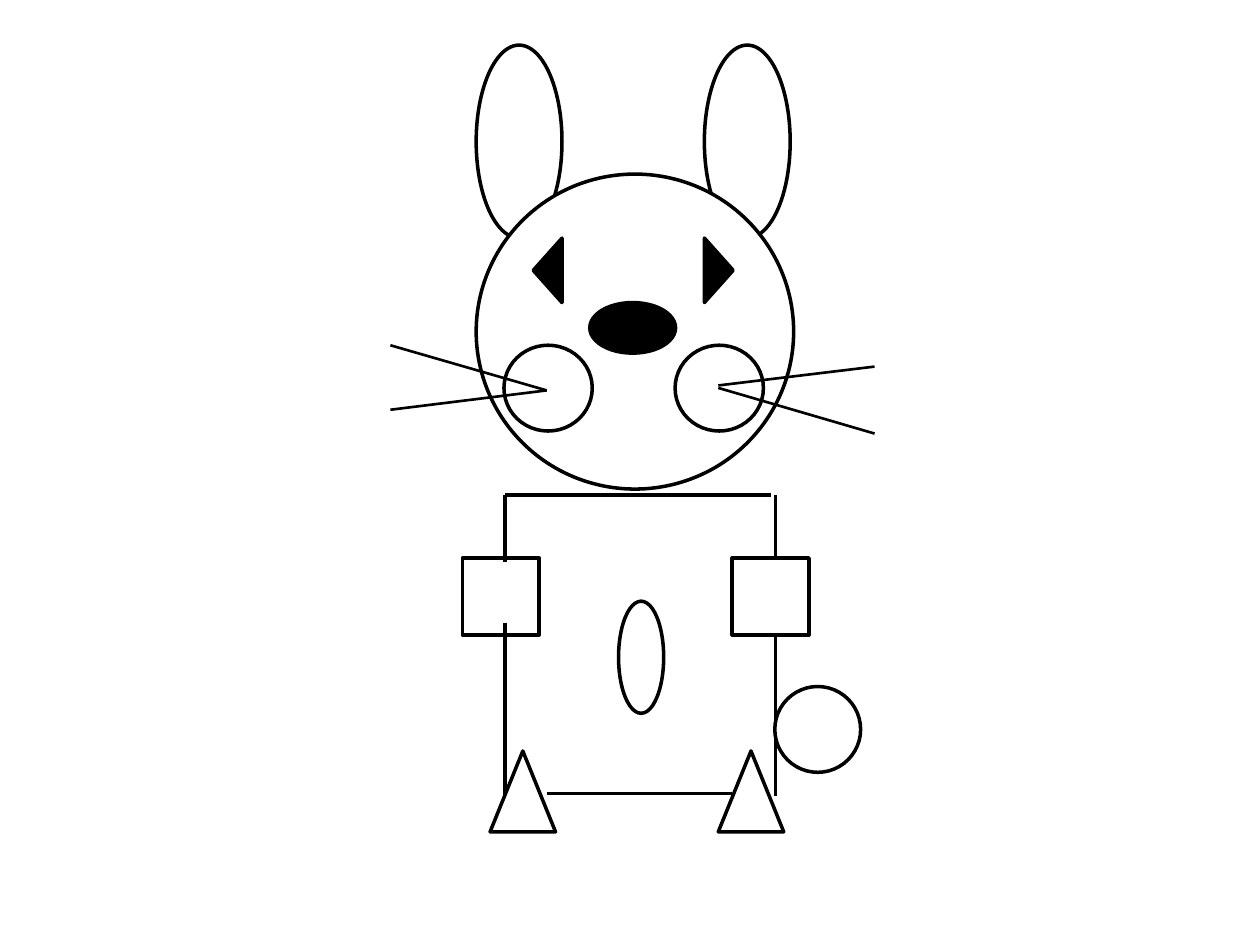
from lxml import etree
from pptx import Presentation
from pptx.dml.color import RGBColor
from pptx.enum.shapes import MSO_CONNECTOR, MSO_SHAPE
from pptx.oxml.ns import qn
from pptx.util import Cm, Pt

OVAL = MSO_SHAPE.OVAL
SQUARE = MSO_SHAPE.RECTANGLE
TRIANGLE = MSO_SHAPE.ISOSCELES_TRIANGLE
STRAIGHT = MSO_CONNECTOR.STRAIGHT

BLACK = RGBColor(0x00, 0x00, 0x00)
WHITE = RGBColor(0xFF, 0xFF, 0xFF)
OUTLINE = 2
WHISKER = 1.5


def add_part(rabbit, kind, left, top, width, height, fill=WHITE, rotation=0):
    """Add an outlined body part, measured in centimetres."""
    part = rabbit.shapes.add_shape(kind, Cm(left), Cm(top), Cm(width), Cm(height))
    part.shadow.inherit = False
    part.rotation = rotation
    part.fill.solid()
    part.fill.fore_color.rgb = fill
    part.line.color.rgb = BLACK
    part.line.width = Pt(OUTLINE)


def add_stroke(rabbit, start, end, weight=OUTLINE):
    """Add a straight line between two points in centimetres."""
    stroke = rabbit.shapes.add_connector(
        STRAIGHT, Cm(start[0]), Cm(start[1]), Cm(end[0]), Cm(end[1]))
    stroke.line.color.rgb = BLACK
    stroke.line.width = Pt(weight)
    etree.SubElement(stroke._element.spPr, qn("a:effectLst"))


def draw_head(rabbit):
    for ear_left in (9.6, 14.2):
        add_part(rabbit, OVAL, ear_left, 0.91, 1.73, 3.89)
    add_part(rabbit, OVAL, 9.6, 3.51, 6.4, 6.35)
    for eye_left, rotation in ((10.39, 270), (13.84, 90)):
        add_part(rabbit, TRIANGLE, eye_left, 5.16, 1.3, 0.58, BLACK, rotation)
    add_part(rabbit, OVAL, 11.89, 6.1, 1.73, 1.02, BLACK)
    for cheek_left in (10.16, 13.61):
        add_part(rabbit, OVAL, cheek_left, 6.96, 1.78, 1.73)

    whiskers = (
        ((11.02, 7.87), (7.87, 6.96)),
        ((11.02, 7.87), (7.87, 8.26)),
        ((17.63, 7.39), (14.48, 7.77)),
        ((17.63, 8.74), (14.48, 7.82)),
    )
    for tip, root in whiskers:
        add_stroke(rabbit, tip, root, WHISKER)


def draw_side(rabbit, x):
    """Draw one side of the body, interrupted at the paw."""
    for top, bottom in ((9.98, 11.33), (12.55, 16.05)):
        add_stroke(rabbit, (x, top), (x, bottom))


def draw_body(rabbit):
    left_side, right_side = 10.18, 15.63
    paw_top, paw_size = 11.25, 1.55

    # The left side lies over its paw, the right side under it.
    add_part(rabbit, SQUARE, 9.32, paw_top, paw_size, paw_size)
    draw_side(rabbit, left_side)
    draw_side(rabbit, right_side)
    add_part(rabbit, SQUARE, 14.76, paw_top, paw_size, paw_size)

    add_stroke(rabbit, (left_side, 9.98), (15.54, 9.98))
    add_stroke(rabbit, (11.02, 16), (14.76, 16))
    add_part(rabbit, OVAL, 12.47, 12.12, 0.91, 2.26)
    for foot_left in (9.88, 14.48):
        add_part(rabbit, TRIANGLE, foot_left, 15.14, 1.32, 1.63)
    add_part(rabbit, OVAL, 15.62, 13.84, 1.73, 1.73)


def main():
    deck = Presentation()
    deck.slide_width, deck.slide_height = Cm(25.4), Cm(19.05)
    slide = deck.slides.add_slide(deck.slide_layouts[6])
    rabbit = slide.shapes.add_group_shape()
    draw_head(rabbit)
    draw_body(rabbit)
    deck.save("out.pptx")


if __name__ == "__main__":
    main()
